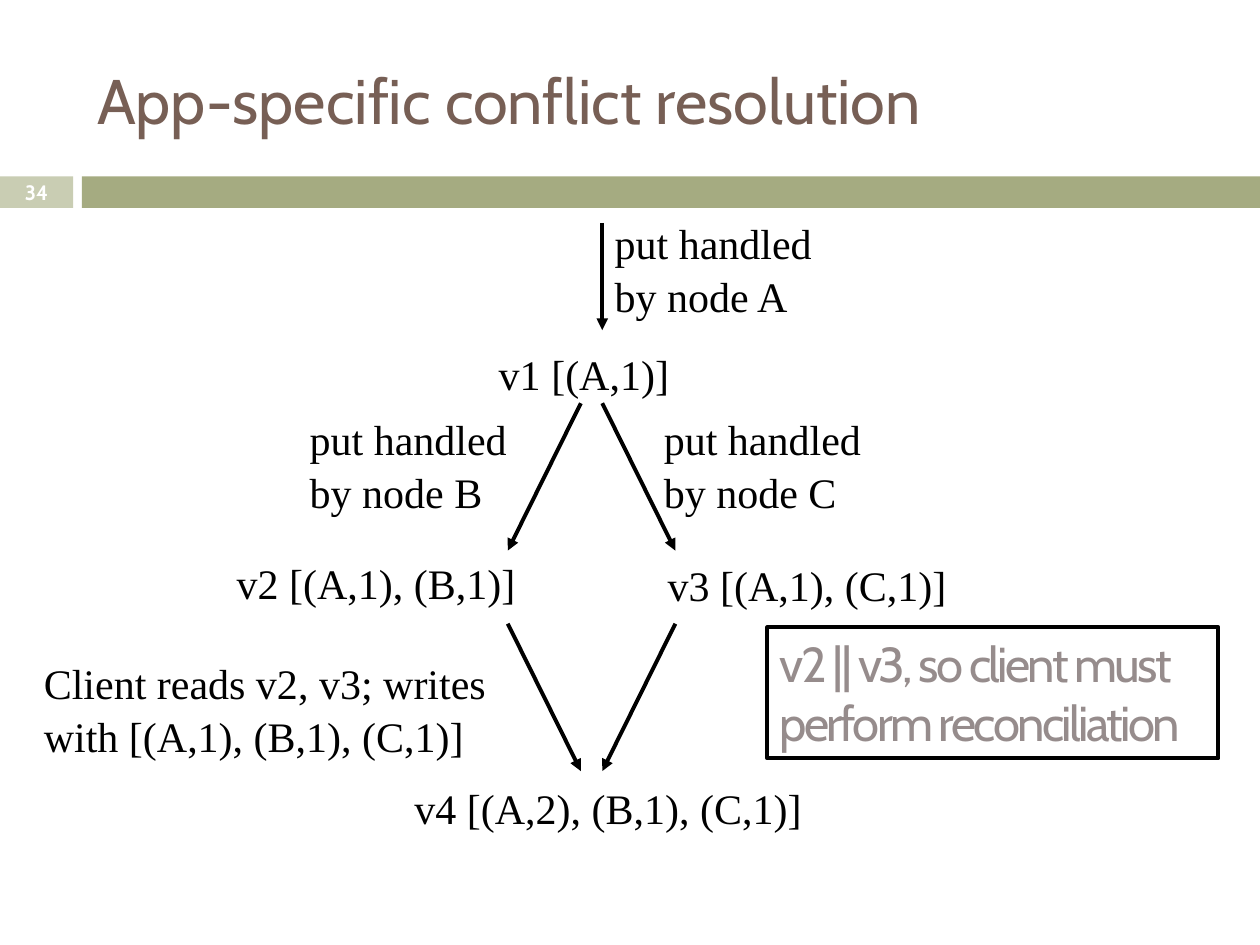
import pptx
import pptx.util
import pptx.dml.color
import pptx.enum.shapes
import pptx.enum.text
import pptx.oxml.ns
import lxml.etree
from pptx.util import Inches

COLORS = {
    "title": "775F55",
    "bar": "A5AB81",
    "number_bar": "C9CDB3",
    "number": "FFFFFF",
    "ink": "000000",
    "note": "968C8C",
}
HEAD_FONT = "Cabin"
BODY_FONT = "Times New Roman"


def rgb(name):
    return pptx.dml.color.RGBColor.from_string(COLORS[name])


class Deck:
    """Holds the style and the current slide."""

    def __init__(self, slide, line_width=2.25):
        self.slide = slide
        self.line_width = pptx.util.Pt(line_width)

    def set_text(self, shape, text, font, size, color, align="LEFT",
                 anchor="TOP", bold=False, line_spacing=None):
        tf = shape.text_frame
        tf.word_wrap = True
        tf.vertical_anchor = getattr(pptx.enum.text.MSO_ANCHOR, anchor)
        p = tf.paragraphs[0]
        p.text = text
        p.alignment = getattr(pptx.enum.text.PP_ALIGN, align)
        p.line_spacing = line_spacing
        p.font.name = font
        p.font.size = pptx.util.Pt(size)
        p.font.bold = bold
        p.font.color.rgb = rgb(color)
        return p

    def title(self, text, x, y, w, h):
        s = self.slide.shapes.title
        s.left, s.top, s.width, s.height = map(Inches, (x, y, w, h))
        self.set_text(s, text, HEAD_FONT, 36, "title", anchor="MIDDLE")

    def rect(self, x, y, w, h, fill=None, line=None):
        s = self.slide.shapes.add_shape(
            pptx.enum.shapes.MSO_SHAPE.RECTANGLE, *map(Inches, (x, y, w, h)))
        s.shadow.inherit = False
        if fill:
            s.fill.solid()
            s.fill.fore_color.rgb = rgb(fill)
        else:
            s.fill.background()
        if line:
            s.line.color.rgb = rgb(line)
            s.line.width = self.line_width
        else:
            s.line.fill.background()
        return s

    def label(self, text, x, y, w, h=0.5):
        s = self.slide.shapes.add_textbox(*map(Inches, (x, y, w, h)))
        self.set_text(s, text, BODY_FONT, 24, "ink", line_spacing=1.05)

    def number(self, text, x, y, w, h):
        s = self.slide.shapes.add_textbox(*map(Inches, (x, y, w, h)))
        s.text_frame.margin_top = s.text_frame.margin_bottom = 0
        self.set_text(s, text, HEAD_FONT, 11.9, "number",
                      "CENTER", "MIDDLE", True)

    def note(self, text, x, y, w, h):
        s = self.rect(x, y, w, h, line="ink")
        p = self.set_text(s, text, HEAD_FONT, 28, "note")
        p.runs[0].font._element.set("spc", "-150")

    def arrow(self, start, end):
        c = self.slide.shapes.add_connector(
            pptx.enum.shapes.MSO_CONNECTOR.STRAIGHT,
            *map(Inches, (*start, *end)))
        c.line.color.rgb = rgb("ink")
        c.line.width = self.line_width
        qn = pptx.oxml.ns.qn
        tail = lxml.etree.SubElement(c.line._get_or_add_ln(), qn("a:tailEnd"))
        tail.set("type", "triangle")
        lxml.etree.SubElement(c._element.spPr, qn("a:effectLst"))


def main():
    prs = pptx.Presentation()
    prs.slide_width, prs.slide_height = Inches(10), Inches(7.5)
    deck = Deck(prs.slides.add_slide(prs.slide_layouts[5]))

    # Header
    deck.rect(0, 1.4, 0.58, 0.25, fill="number_bar")
    deck.rect(0.65, 1.4, 9.35, 0.25, fill="bar")
    deck.number("34", 0, 1.39, 0.58, 0.27)
    deck.title("App-specific conflict resolution", 0.67, 0.25, 8.92, 1.08)

    # Versions
    deck.label("v1 [(A,1)]", 3.86, 2.7, 1.75)
    deck.label("v2 [(A,1), (B,1)]", 1.78, 4.36, 2.5)
    deck.label("v3 [(A,1), (C,1)]", 5.2, 4.37, 2.5)
    deck.label("v4 [(A,2), (B,1), (C,1)]", 3.19, 6.14, 3.33)

    # Writes that lead from one version to the next
    deck.label("put handled by node A", 4.78, 1.66, 2.09, 0.91)
    deck.label("put handled by node B", 2.36, 3.21, 2, 0.91)
    deck.label("put handled by node C", 5.17, 3.21, 2.08, 0.91)
    deck.label("Client reads v2, v3; writes with [(A,1), (B,1), (C,1)]",
               0.25, 5.15, 4.03, 0.91)

    # Arrows: one into v1, then a diamond that splits and merges
    deck.arrow((4.78, 1.77), (4.78, 2.62))
    for inner, outer in ((4.61, 4.03), (4.78, 5.36)):
        deck.arrow((inner, 3.2), (outer, 4.37))
        deck.arrow((outer, 4.95), (inner, 6.12))

    # Conclusion
    deck.note("v2 || v3, so client must perform reconciliation",
              6.09, 4.98, 3.58, 1.04)

    prs.save("out.pptx")


if __name__ == "__main__":
    main()
